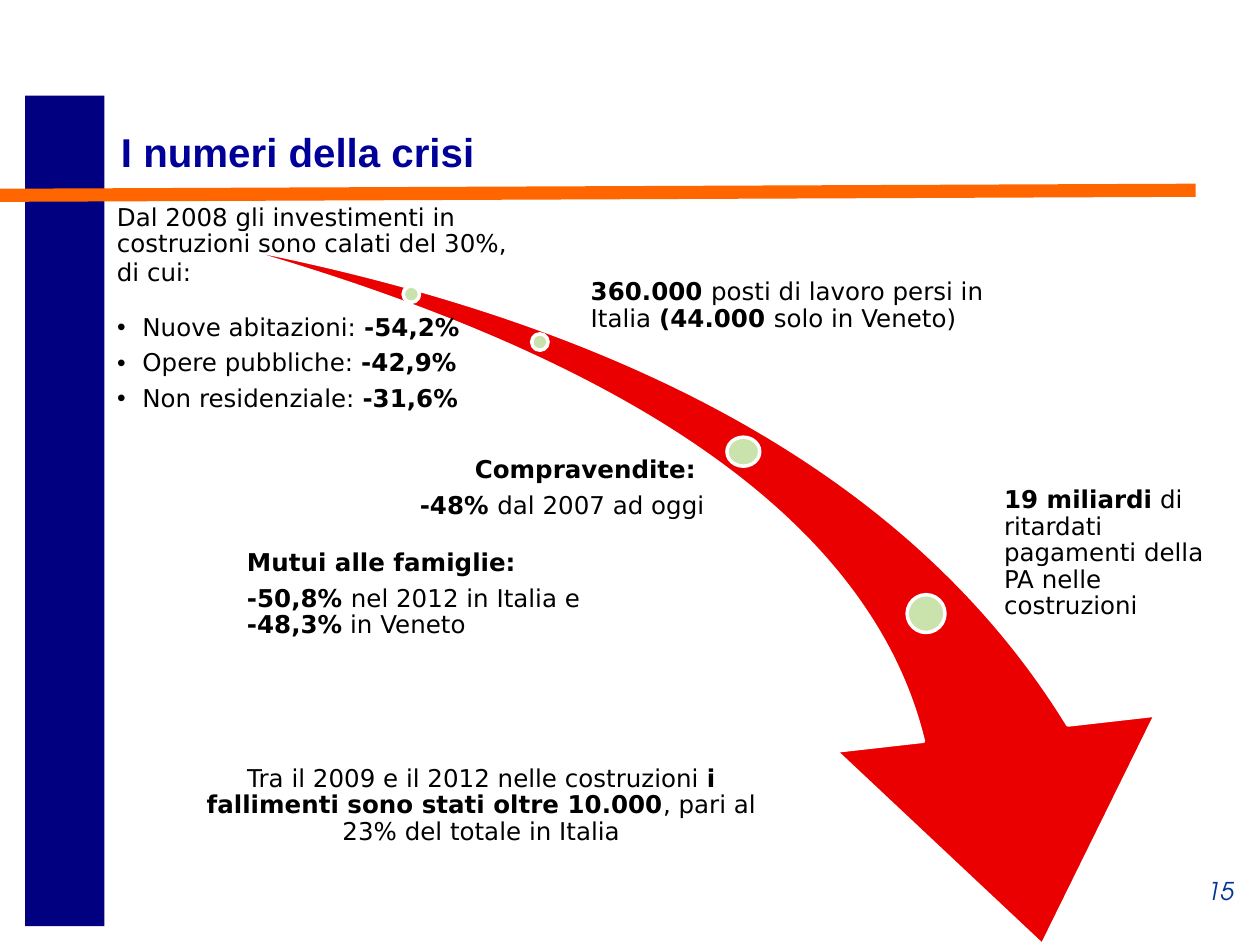
from lxml.etree import SubElement
from pptx import Presentation
from pptx.dml.color import RGBColor
from pptx.enum.shapes import MSO_CONNECTOR, MSO_SHAPE
from pptx.enum.text import MSO_ANCHOR, MSO_AUTO_SIZE, PP_ALIGN
from pptx.oxml.ns import qn
from pptx.util import Inches, Pt

INK = {"navy": "000080", "orange": "FF6600", "title": "000099", "page": "003399",
       "red": "EA0000", "green": "CAE2AB", "white": "FFFFFF", "black": "000000"}
BODY = {"name": "DejaVu Sans", "size": Pt(14), "italic": False}
HEAD = {"name": "Arial", "size": Pt(23), "bold": True}
PAGE = {"name": "TeX Gyre Adventor", "size": Pt(14), "italic": True}
PARA = {"line_spacing": 0.9, "space_before": Pt(0), "space_after": Pt(5.3)}
FLAT = {"space_before": Pt(0)}
COLS, ROWS = 100, 75


def apply(item, values):
    for key, value in values.items():
        setattr(item, key, value)


class Deck:
    """Holds the style and the current slide; places are in grid columns and rows."""

    def __init__(self):
        self.prs = Presentation()
        apply(self.prs, {"slide_width": Inches(10), "slide_height": Inches(7.5)})
        self.slide = self.prs.slides.add_slide(self.prs.slide_layouts[1])
        self.shapes = self.slide.shapes

    def grid(self, *nums):
        units = (self.prs.slide_width / COLS, self.prs.slide_height / ROWS)
        return [round(num * units[i % 2]) for i, num in enumerate(nums)]

    def color(self, name):
        return RGBColor.from_string(INK[name])

    def shape(self, kind, at, fill, line=None, turn=0, adjust=()):
        item = self.shapes.add_shape(kind, *self.grid(*at))
        item.shadow.inherit = False
        item.rotation = turn
        for i, value in enumerate(adjust):
            item.adjustments[i] = value
        item.fill.solid()
        item.fill.fore_color.rgb = self.color(fill)
        if line:
            item.line.color.rgb = self.color(line)
            item.line.width = Pt(2)
        else:
            item.line.fill.background()

    def line(self, ends, color, width):
        item = self.shapes.add_connector(MSO_CONNECTOR.STRAIGHT, *self.grid(*ends))
        item.line.color.rgb = self.color(color)
        item.line.width = Pt(width)
        SubElement(item.element.spPr, qn("a:effectLst"))

    def fill_in(self, item, lines, font=BODY, color="black", para=PARA,
                align=PP_ALIGN.LEFT, bullet=False, **frame):
        """Put in the lines; text between ** marks is bold."""
        box = item.text_frame
        apply(box, {"word_wrap": True, "auto_size": MSO_AUTO_SIZE.NONE} | frame)
        for i, text in enumerate(lines):
            par = box.add_paragraph() if i else box.paragraphs[0]
            apply(par, para | {"alignment": align})
            if bullet:
                props = par._p.get_or_add_pPr()
                props.set("marL", str(Inches(0.2)))
                props.set("indent", str(Inches(-0.2)))
                SubElement(props, qn("a:buChar")).set("char", "•")
            for j, part in enumerate(text.split("**")):
                if part:
                    run = par.add_run()
                    run.text = part
                    apply(run.font, {"bold": j % 2 == 1} | font)
                    run.font.color.rgb = self.color(color)

    def text(self, at, lines, **style):
        self.fill_in(self.shapes.add_textbox(*self.grid(*at)), lines, **style)

    def holder(self, index, at, lines, **style):
        item = self.slide.placeholders[index]
        apply(item, dict(zip(("left", "top", "width", "height"), self.grid(*at))))
        item.element.getparent().append(item.element)  # bring to front
        self.fill_in(item, lines, **style)


def main():
    deck = Deck()

    # Side bar, rule, page number and title
    deck.shape(MSO_SHAPE.RECTANGLE, (2, 7.6, 6.3, 65.9), "navy")
    deck.line((0, 15.5, 94.9, 15.1), "orange", 7.5)
    deck.text((87, 69, 11.9, 5), ["15"], font=PAGE, color="page", para=FLAT,
              align=PP_ALIGN.RIGHT)
    deck.holder(0, (8.6, 9.1, 86.6, 5.3), ["I numeri della crisi"], font=HEAD,
                color="title", para=FLAT, vertical_anchor=MSO_ANCHOR.BOTTOM)

    # Falling arrow
    deck.shape(MSO_SHAPE.SWOOSH_ARROW, (26.9, 10.2, 55.6, 74), "red", "white",
               turn=90, adjust=(0.155, 0.314))

    # Figures around the arrow
    thin = Inches(0.02)
    deck.text((19.4, 42.5, 27.6, 9.4),
              ["**Mutui alle famiglie:**",
               "**-50,8% **nel 2012 in Italia e **-48,3%** in Veneto"],
              vertical_anchor=MSO_ANCHOR.MIDDLE, margin_left=thin,
              margin_right=thin, margin_top=thin, margin_bottom=thin)
    grow = {"auto_size": MSO_AUTO_SIZE.SHAPE_TO_FIT_TEXT}
    deck.text((78.7, 38.2, 18.2, 11.6),
              ["**19 miliardi** di ritardati pagamenti della PA nelle costruzioni"],
              **grow)
    deck.text((45.9, 21.7, 34.6, 5.3),
              ["**360.000 **posti di lavoro persi in Italia "
               "**(44.000 **solo in Veneto)"], **grow)
    deck.text((28.2, 35.8, 28.7, 6.1),
              ["**Compravendite: **", "**-48% **dal 2007 ad oggi"],
              align=PP_ALIGN.RIGHT, **grow)
    deck.text((8.3, 15.8, 34.3, 5.3),
              ["Dal 2008 gli investimenti in costruzioni sono calati del 30%,"],
              **grow)
    deck.text((8.3, 20.2, 9.4, 3.1), ["di cui:"], **grow)
    deck.holder(1, (8.3, 24.5, 34.3, 9),
                ["Nuove abitazioni: **-54,2%**", "Opere pubbliche: **-42,9%**",
                 "Non residenziale: **-31,6%**"], bullet=True)

    # Dots along the arrow
    for dot in ((32, 22.7, 1.3, 1.3), (42.2, 26.5, 1.3, 1.3),
                (57.7, 34.7, 2.6, 2.3), (72, 47.2, 3, 3)):
        deck.shape(MSO_SHAPE.OVAL, dot, "green", "white")

    # Closing figure
    deck.text((13.2, 60.3, 50, 7.4),
              ["Tra il 2009 e il 2012 nelle costruzioni **i fallimenti sono stati "
               "oltre 10.000**, pari al 23% del totale in Italia"],
              align=PP_ALIGN.CENTER, **grow)

    deck.prs.save("out.pptx")


if __name__ == "__main__":
    main()
